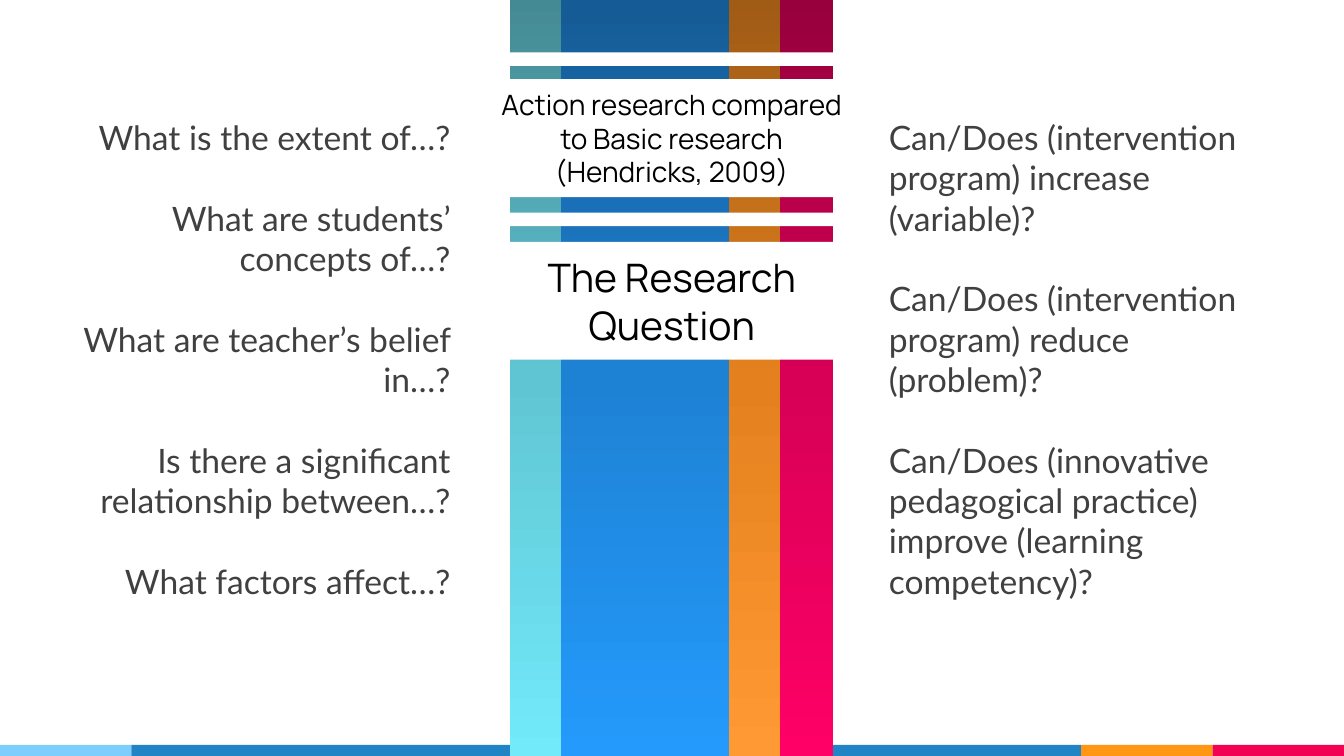
from copy import deepcopy

from pptx import Presentation
from pptx.dml.color import RGBColor
from pptx.enum.shapes import MSO_SHAPE
from pptx.enum.text import MSO_ANCHOR, MSO_AUTO_SIZE, PP_ALIGN
from pptx.oxml.ns import qn
from pptx.util import Pt

RECTANGLE = MSO_SHAPE.RECTANGLE
MIDDLE = MSO_ANCHOR.MIDDLE
NO_AUTOFIT = MSO_AUTO_SIZE.NONE
LEFT, CENTER, RIGHT = PP_ALIGN.LEFT, PP_ALIGN.CENTER, PP_ALIGN.RIGHT

WHITE = RGBColor(0xFF, 0xFF, 0xFF)
BLACK = RGBColor(0, 0, 0)
GRAY = RGBColor(0x40, 0x40, 0x40)
SKY = RGBColor(0x7E, 0xCE, 0xFD)
BLUE = RGBColor(0x21, 0x85, 0xC5)
ORANGE = RGBColor(0xFF, 0x97, 0x15)
PINK = RGBColor(0xF2, 0x02, 0x53)
TEAL_SHADES = (RGBColor(0x44, 0x8A, 0x94), RGBColor(0x60, 0xC5, 0xD3), RGBColor(0x72, 0xEA, 0xFA))
BLUE_SHADES = (RGBColor(0x15, 0x5B, 0x95), RGBColor(0x1E, 0x82, 0xD4), RGBColor(0x24, 0x9A, 0xFC))
ORANGE_SHADES = (RGBColor(0xA0, 0x5B, 0x15), RGBColor(0xE4, 0x81, 0x1E), RGBColor(0xFF, 0x99, 0x33))
PINK_SHADES = (RGBColor(0x97, 0x00, 0x3C), RGBColor(0xD7, 0x00, 0x56), RGBColor(0xFF, 0x00, 0x66))

PAGE_WIDTH, PAGE_HEIGHT = 960, 540
COLUMN_LEFT, COLUMN_WIDTH = 364.3, 231.1
FOOTER_TOP = 532
LINE_HEIGHT = 28.8
INSET = 7.2

FOOTER_BANDS = [(93.9, SKY), (678.4, BLUE), (93.9, ORANGE), (93.8, PINK)]
STRIPES = [(36.5, TEAL_SHADES), (120, BLUE_SHADES), (36.5, ORANGE_SHADES), (38.1, PINK_SHADES)]
BREAK_TOPS = [37.4, 151.9]

BASIC_QUESTIONS = [
    "What is the extent of…?",
    "What are students’ concepts of…?",
    "What are teacher’s belief in…?",
    "Is there a significant relationship between…?",
    "What factors affect…?",
]
ACTION_QUESTIONS = [
    "Can/Does (intervention program) increase (variable)?",
    "Can/Does (intervention program) reduce (problem)?",
    "Can/Does (innovative pedagogical practice) improve (learning competency)?",
]


def add_block(page, left, top, width, height, color=WHITE):
    """Add a flat rectangle without outline or shadow."""
    block = page.shapes.add_shape(RECTANGLE, Pt(left), Pt(top), Pt(width), Pt(height))
    block.shadow.inherit = False
    block.line.fill.background()
    block.fill.solid()
    block.fill.fore_color.rgb = color
    return block


def add_stripe(page, left, width, shades):
    """Add a full-height stripe that runs through three shades downward."""
    stripe = add_block(page, left, 0, width, PAGE_HEIGHT)
    stripe.fill.gradient()
    stripe.fill.gradient_angle = 270
    stop_list = next(stripe.element.iter(qn("a:gsLst")))
    stop_list.insert(1, deepcopy(stop_list[0]))
    for stop, position, shade in zip(stripe.fill.gradient_stops, (0, 0.5, 1), shades):
        stop.position = position
        stop.color.rgb = shade


def format_para(para, font_name, size, color, align):
    """Set the alignment and font of one paragraph."""
    para.alignment = align
    for span in para.runs:
        span.font.name = font_name
        span.font.size = Pt(size)
        span.font.color.rgb = color


def write_label(shape, text, size):
    """Write centred heading text in a shape."""
    frame = shape.text_frame
    frame.text = text
    frame.word_wrap = True
    frame.auto_size = NO_AUTOFIT
    frame.vertical_anchor = MIDDLE
    format_para(frame.paragraphs[0], "Manrope", size, BLACK, CENTER)


def add_questions(page, left, questions, align):
    """Add a column of questions set one line apart."""
    box = page.shapes.add_textbox(Pt(left), Pt(47.5), Pt(286.6), Pt(453.6))
    frame = box.text_frame
    frame.word_wrap = True
    frame.margin_left = frame.margin_right = frame.margin_bottom = Pt(INSET)
    frame.margin_top = Pt(INSET + LINE_HEIGHT)
    frame.text = "\n".join(questions)
    for index, para in enumerate(frame.paragraphs):
        format_para(para, "Lato", 24, GRAY, align)
        para.space_before = Pt(LINE_HEIGHT if index else 0)


def place_title(page, text):
    """Place the title placeholder as a white panel over the stripes."""
    title = page.shapes.title
    title.left, title.top = Pt(COLUMN_LEFT), Pt(172.8)
    title.width, title.height = Pt(COLUMN_WIDTH), Pt(84.2)
    title.fill.solid()
    title.fill.fore_color.rgb = WHITE
    write_label(title, text, 28)
    title.element.getparent().append(title.element)


def main():
    """Build the slide and save the deck."""
    deck = Presentation()
    deck.slide_width, deck.slide_height = Pt(PAGE_WIDTH), Pt(PAGE_HEIGHT)
    page = deck.slides.add_slide(deck.slide_layouts[5])

    left = 0
    for width, color in FOOTER_BANDS:
        add_block(page, left, FOOTER_TOP, width, PAGE_HEIGHT - FOOTER_TOP, color)
        left += width

    add_questions(page, 42.2, BASIC_QUESTIONS, RIGHT)
    add_questions(page, 627.8, ACTION_QUESTIONS, LEFT)

    left = COLUMN_LEFT
    for width, shades in STRIPES:
        add_stripe(page, left, width, shades)
        left += width

    place_title(page, "The Research Question")
    source_panel = add_block(page, 346.6, 56.6, 266.4, 84.2)
    write_label(source_panel, "Action research compared to Basic research (Hendricks, 2009)", 20)
    for top in BREAK_TOPS:
        add_block(page, COLUMN_LEFT, top, COLUMN_WIDTH, 9.6)

    deck.save("out.pptx")


if __name__ == "__main__":
    main()
